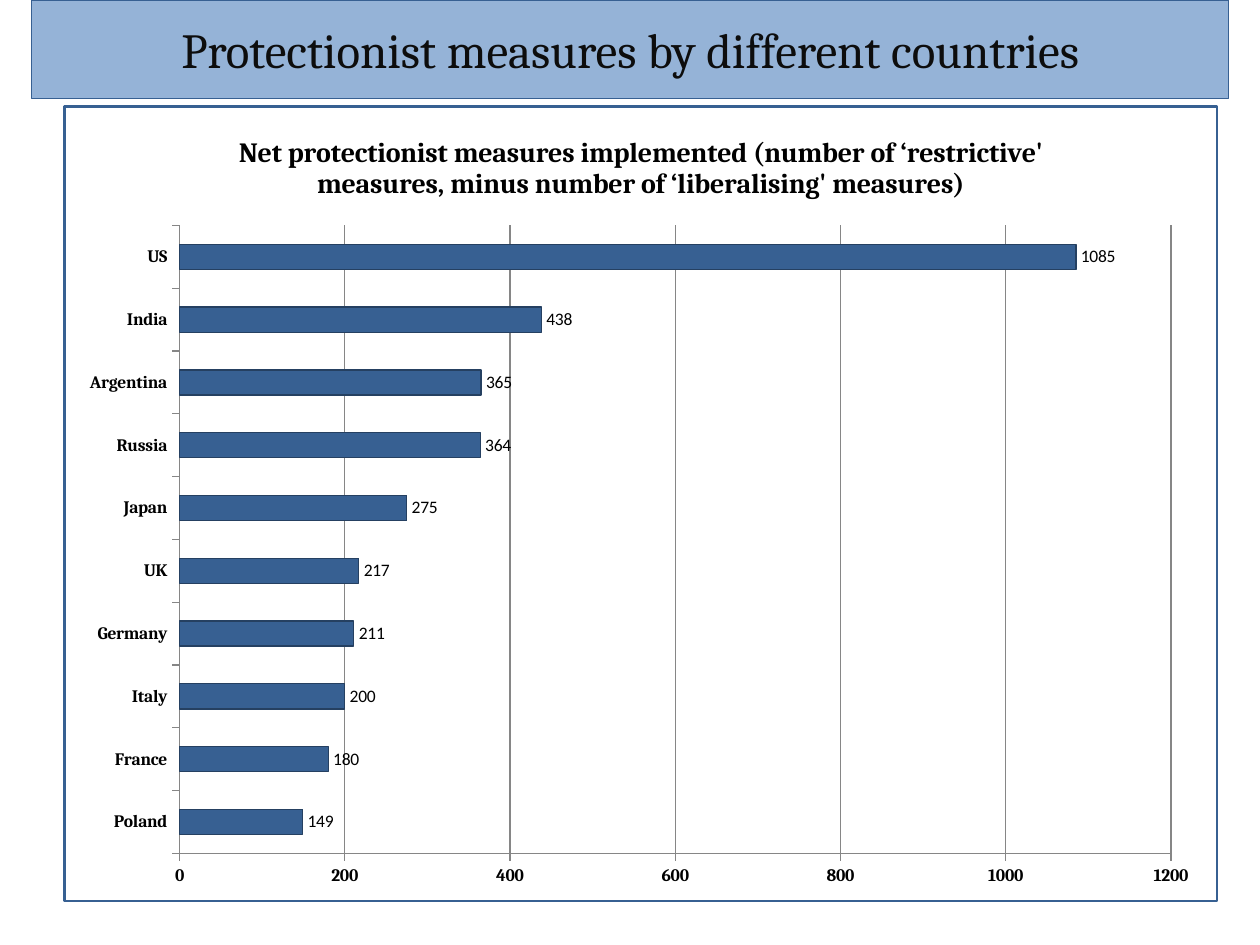
from lxml.etree import SubElement
from pptx import Presentation
from pptx.chart.data import CategoryChartData
from pptx.dml.color import RGBColor
from pptx.enum.chart import XL_CHART_TYPE, XL_LABEL_POSITION, XL_TICK_MARK
from pptx.enum.text import MSO_ANCHOR, MSO_AUTO_SIZE, PP_ALIGN
from pptx.oxml import parse_xml
from pptx.oxml.ns import nsdecls, qn
from pptx.util import Inches, Pt

WIDTH, HEIGHT = Inches(10), Inches(7.5)
BLUE, GRID = "376092", "868686"
HEADING = "Protectionist measures by different countries"
CHART_TITLE = (
    "Net protectionist measures implemented (number of ‘restrictive' "
    "measures, minus number of ‘liberalising' measures)"
)
MEASURES = {
    "Poland": 149, "France": 180, "Italy": 200, "Germany": 211, "UK": 217,
    "Japan": 275, "Russia": 364, "Argentina": 365, "India": 438, "US": 1085,
}


def color(value):
    return RGBColor.from_string(value)


def share(left, top, width, height):
    return (int(WIDTH * left), int(HEIGHT * top),
            int(WIDTH * width), int(HEIGHT * height))


def apply(target, values):
    for name, value in values.items():
        setattr(target, name, value)


def style_font(font, size, name="Cambria", bold=False, shade="000000"):
    apply(font, {"size": Pt(size), "name": name, "bold": bold})
    font.color.rgb = color(shade)


def style_line(line, shade, width):
    line.color.rgb = color(shade)
    line.width = Pt(width)


def style_fill(fill, shade):
    fill.solid()
    fill.fore_color.rgb = color(shade)


def add_heading(page):
    box = page.shapes.title
    places = share(0.025, 0, 0.95, 0.104)
    apply(box, dict(zip(("left", "top", "width", "height"), places)))
    style_fill(box.fill, "95B3D7")
    style_line(box.line, BLUE, 0.75)
    apply(box.text_frame, {
        "text": HEADING, "word_wrap": True,
        "auto_size": MSO_AUTO_SIZE.NONE, "vertical_anchor": MSO_ANCHOR.MIDDLE,
    })
    para = box.text_frame.paragraphs[0]
    para.alignment = PP_ALIGN.CENTER
    style_font(para.runs[0].font, 28, shade="0D0D0D")


def style_axis(axis):
    apply(axis, {"major_tick_mark": XL_TICK_MARK.OUTSIDE,
                 "minor_tick_mark": XL_TICK_MARK.NONE})
    style_font(axis.tick_labels.font, 10, bold=True)
    style_line(axis.format.line, GRID, 0.75)


def style_bars(plot):
    apply(plot, {"gap_width": 150, "vary_by_categories": False,
                 "has_data_labels": True})
    apply(plot.data_labels, {"show_value": True,
                             "position": XL_LABEL_POSITION.OUTSIDE_END})
    style_font(plot.data_labels.font, 10, "Calibri")
    bars = plot.series[0].format
    style_fill(bars.fill, BLUE)
    style_line(bars.line, "254061", 0.75)


def place_plot(chart, **shares):
    area = chart.plots[0]._element.getparent()
    for old in area.findall(qn("c:layout")):
        area.remove(old)
    layout = parse_xml(f'<c:layout {nsdecls("c")}/>')
    manual = SubElement(layout, qn("c:manualLayout"))
    settings = {"layoutTarget": "inner", "xMode": "edge", "yMode": "edge"}
    for name, value in {**settings, **shares}.items():
        SubElement(manual, qn(f"c:{name}")).set("val", str(value))
    area.insert(0, layout)


def frame_chart(chart):
    frame = parse_xml(
        f'<c:spPr {nsdecls("c", "a")}>'
        '<a:solidFill><a:srgbClr val="FFFFFF"/></a:solidFill>'
        f'<a:ln w="{Pt(1.5)}"><a:solidFill><a:srgbClr val="{BLUE}"/>'
        '</a:solidFill></a:ln></c:spPr>'
    )
    chart._chartSpace.find(qn("c:chart")).addnext(frame)


def add_measures_chart(page):
    table = CategoryChartData()
    table.categories = list(MEASURES)
    table.add_series("Series 1", list(MEASURES.values()))
    chart = page.shapes.add_chart(
        XL_CHART_TYPE.BAR_CLUSTERED, *share(0.05, 0.111, 0.917, 0.844), table
    ).chart
    style_font(chart.font, 10, "Calibri")
    apply(chart, {"has_legend": False, "has_title": True})
    title = chart.chart_title
    title.include_in_layout = False
    title.text_frame.text = CHART_TITLE
    style_font(title.text_frame.paragraphs[0].runs[0].font, 16, bold=True)
    for axis in (chart.category_axis, chart.value_axis):
        style_axis(axis)
    apply(chart.value_axis, {"minimum_scale": 0, "maximum_scale": 1200,
                             "major_unit": 200, "has_major_gridlines": True})
    style_line(chart.value_axis.major_gridlines.format.line, GRID, 0.75)
    style_bars(chart.plots[0])
    place_plot(chart, x=0.1, y=0.15, w=0.86, h=0.79)
    frame_chart(chart)


def main():
    deck = Presentation()
    apply(deck, {"slide_width": WIDTH, "slide_height": HEIGHT})
    page = deck.slides.add_slide(deck.slide_layouts[5])
    add_heading(page)
    add_measures_chart(page)
    deck.save("out.pptx")


if __name__ == "__main__":
    main()
